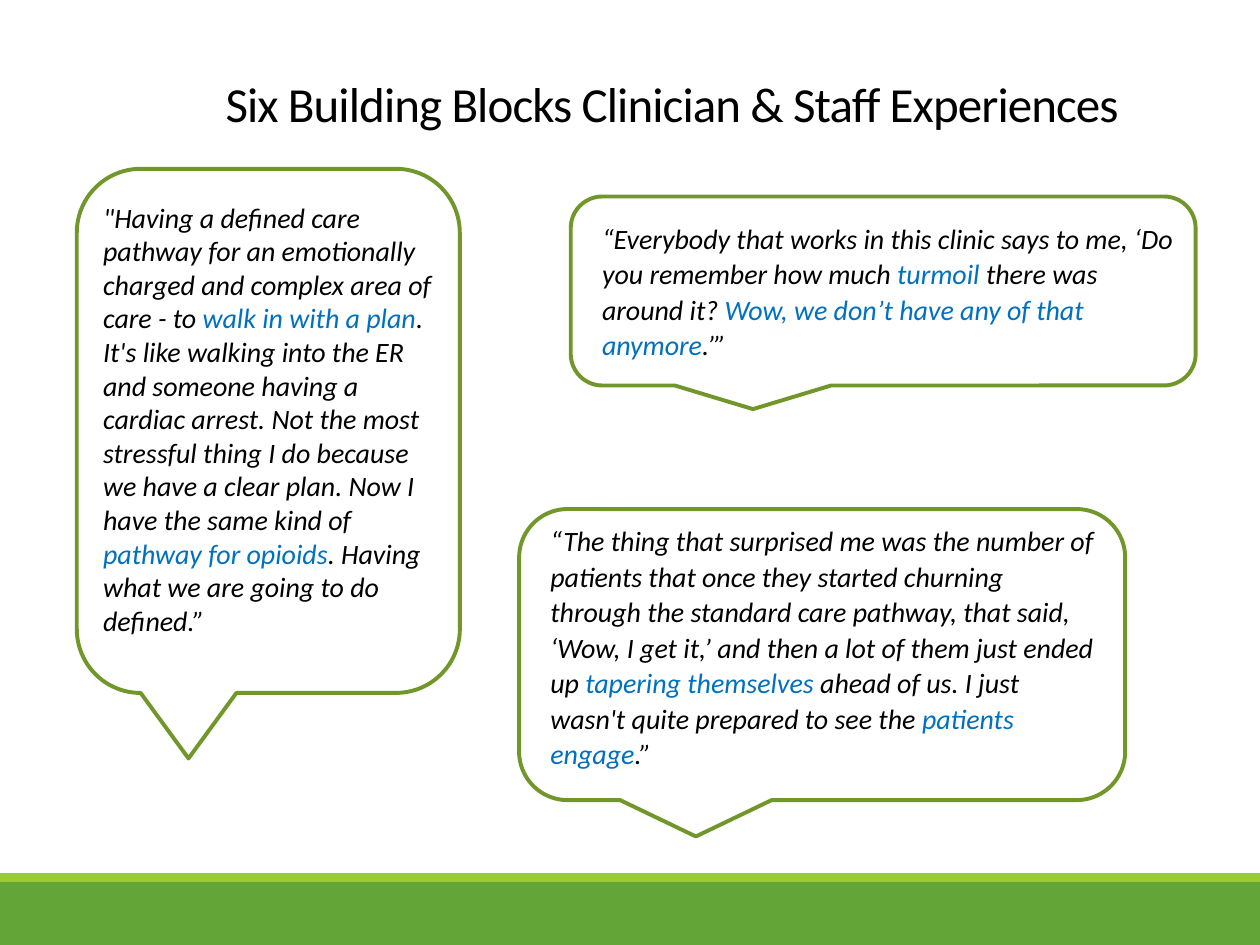
from pptx import Presentation
from pptx.dml.color import RGBColor
from pptx.enum.shapes import MSO_SHAPE as Shape
from pptx.enum.text import MSO_ANCHOR as Anchor, MSO_AUTO_SIZE as Fit, PP_ALIGN as Align
from pptx.util import Inches, Pt

BLACK, BLUE, OLIVE = "000000", "0070C0", "719629"
GREEN, LIME = "63A537", "99CB38"


def color(code):
    return RGBColor.from_string(code)


def place(box):
    return [Inches(n) for n in box]


def add_run(para, text, size, code, italic=False):
    run = para.add_run()
    run.text = text
    font = run.font
    font.name, font.size, font.italic = "Calibri", Pt(size), italic
    font.color.rgb = color(code)
    return run


def add_band(slide, box, code):
    band = slide.shapes.add_shape(Shape.RECTANGLE, *place(box))
    band.shadow.inherit = False
    band.fill.solid()
    band.fill.fore_color.rgb = color(code)
    band.line.fill.background()


def add_footer(slide, left, top, width, height):
    rim = 0.07
    add_band(slide, (left, top + rim, width, height - rim), GREEN)
    add_band(slide, (left, top, width, rim), LIME)


def add_title(slide, box, text):
    title = slide.shapes.title
    title.left, title.top, title.width, title.height = place(box)
    frame = title.text_frame
    frame.word_wrap = True
    frame.auto_size = Fit.NONE
    frame.vertical_anchor = Anchor.BOTTOM
    para = frame.paragraphs[0]
    para.alignment = Align.LEFT
    para.line_spacing = 0.85
    run = add_run(para, text, 28, BLACK)
    run.font._element.set("spc", "-50")


def add_quote(slide, box, inner, spacing, parts):
    """Draw a speech bubble; inner is the text box relative to it."""
    left, top, width, height = box
    # Bubble
    bubble = slide.shapes.add_shape(Shape.ROUNDED_RECTANGULAR_CALLOUT, *place(box))
    bubble.shadow.inherit = False
    bubble.fill.background()
    bubble.line.color.rgb = color(OLIVE)
    bubble.line.width = Pt(2.25)
    # Words, alternately plain and highlighted
    dx, dy, wide, high = inner
    words = slide.shapes.add_textbox(*place((left + dx, top + dy, wide, high)))
    frame = words.text_frame
    frame.word_wrap = True
    frame.auto_size = Fit.SHAPE_TO_FIT_TEXT
    para = frame.paragraphs[0]
    para.line_spacing = spacing
    for i, text in enumerate(parts):
        add_run(para, text, 16, BLUE if i % 2 else BLACK, italic=True)


QUOTES = [
    ((0.61, 1.34, 3.04, 4.16), (0.11, 0.2, 2.82, 3.6), 1.0, [
        "\"Having a defined care pathway for an emotionally charged and "
        "complex area of care - to ",
        "walk in with a plan",
        ". It's like walking into the ER and someone having a cardiac arrest. "
        "Not the most stressful thing I do because we have a clear plan. "
        "Now I have the same kind of ",
        "pathway for opioids",
        ". Having what we are going to do defined.”"]),
    ((4.53, 1.56, 4.96, 1.5), (0.15, 0.13, 4.81, 1.24), 1.06, [
        "“Everybody that works in this clinic says to me, ‘Do you remember how much ",
        "turmoil",
        " there was around it? ",
        "Wow, we don’t have any of that anymore",
        ".’”"]),
    ((4.12, 4.04, 4.81, 2.31), (0.15, 0.05, 4.53, 2.1), 1.06, [
        "“The thing that surprised me was the number of patients that once they "
        "started churning through the standard care pathway, that said, "
        "‘Wow, I get it,’ and then a lot of them just ended up ",
        "tapering themselves ",
        "ahead of us. I just wasn't quite prepared to see the ",
        "patients engage",
        ".”"]),
]


def main():
    deck = Presentation()
    deck.slide_width, deck.slide_height = Inches(10), Inches(7.5)
    slide = deck.slides.add_slide(deck.slide_layouts[5])
    add_footer(slide, 0, 6.93, 10, 0.57)
    add_title(slide, (1.69, 0.32, 8.1, 0.78),
              "Six Building Blocks Clinician & Staff Experiences")
    for quote in QUOTES:
        add_quote(slide, *quote)
    deck.save("out.pptx")


if __name__ == "__main__":
    main()
